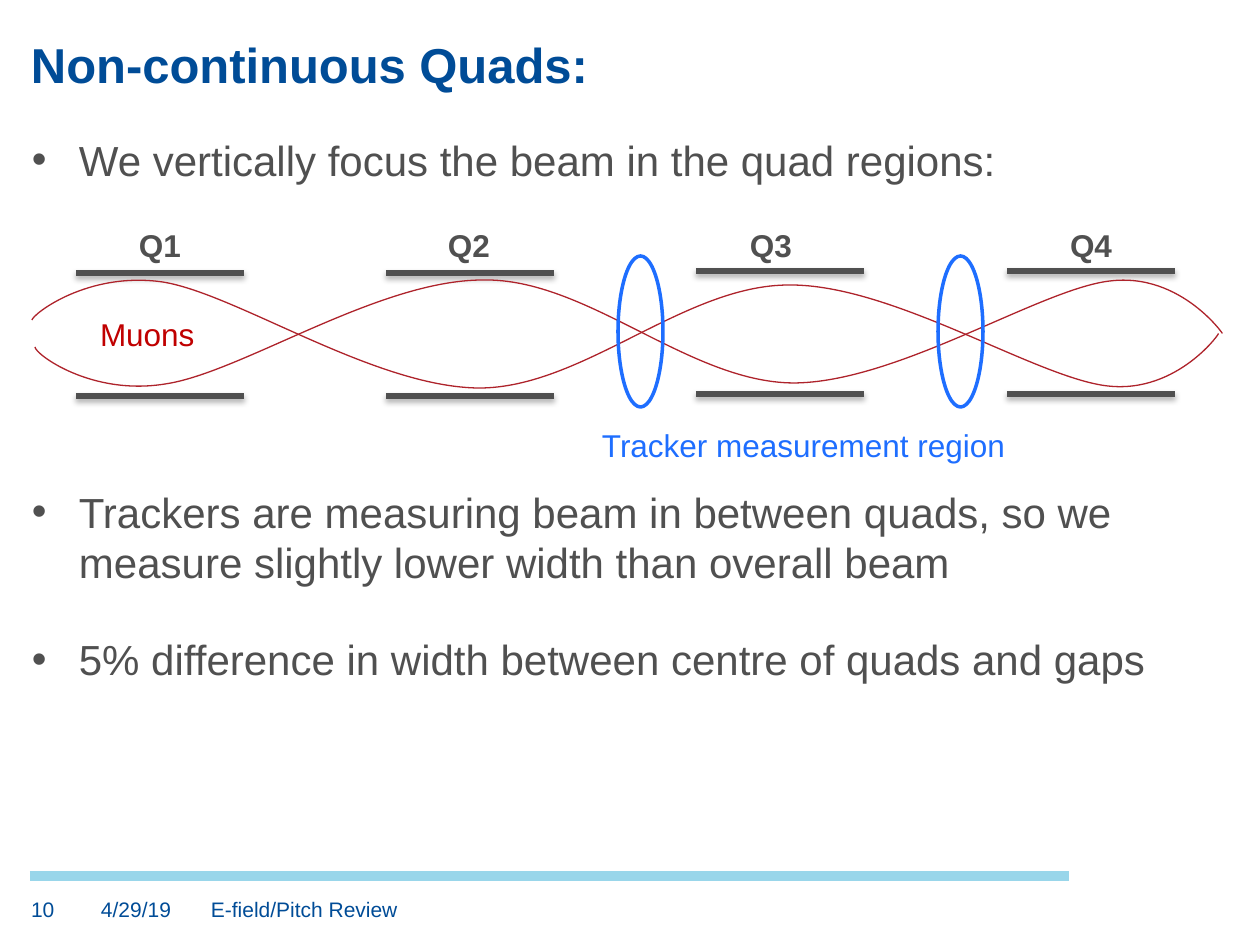
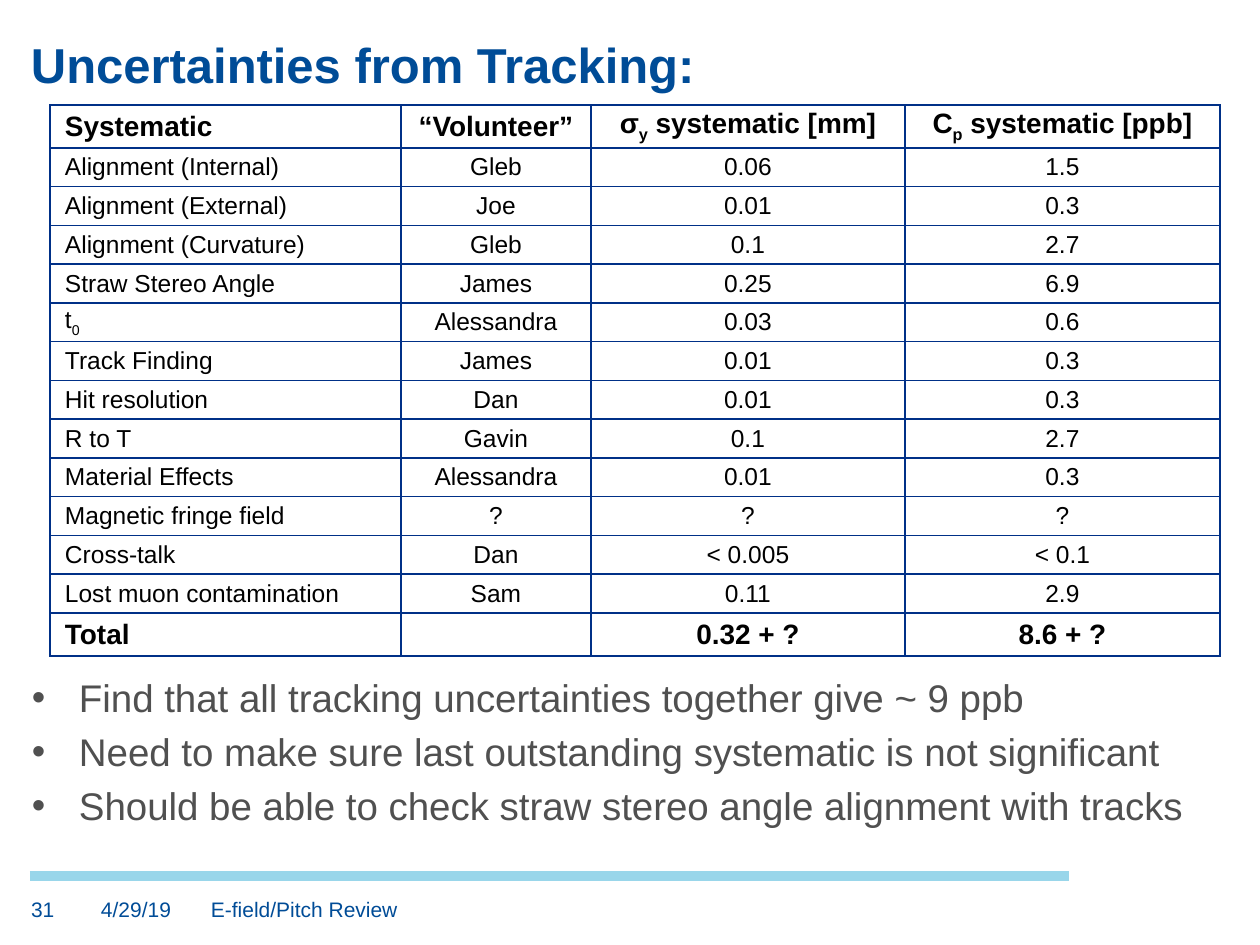
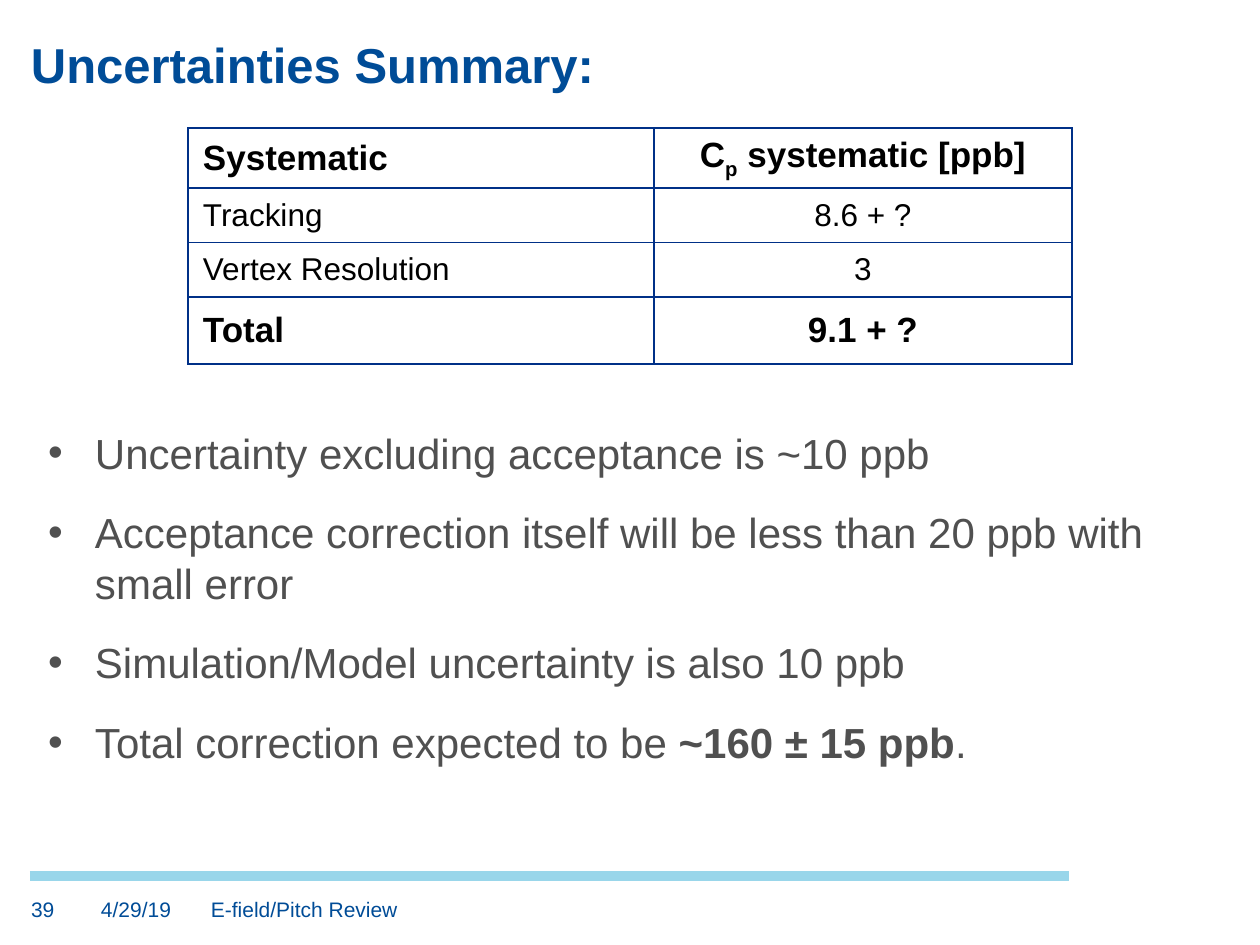
from lxml.etree import SubElement as Sub
from pptx import Presentation
from pptx.dml.color import RGBColor as RGB
from pptx.enum.shapes import MSO_CONNECTOR as LINK, MSO_SHAPE as SHAPE
from pptx.enum.text import MSO_ANCHOR as ANCHOR, PP_ALIGN as ALIGN
from pptx.oxml.ns import qn
from pptx.util import Pt

SCALE = 914400 / 126
FONT = "Arial"
HUES = {
    "title": "004C97",
    "band": "99D6EA",
    "text": "505050",
    "muon": "AE232B",
    "label": "C00000",
    "track": "1E6EFF",
    "grid": "003087",
    "cell": "000000",
    "shade": "000000",
}

WAVES = [
    [(32, 320), (33, 314), (88, 271), (163, 282), (237, 294), (374, 387),
     (479, 388), (583, 388), (684, 285), (789, 285), (893, 284), (1036, 378),
     (1108, 386), (1179, 394), (1223, 329), (1218, 334)],
    [(35, 347), (35, 354), (91, 396), (165, 384), (241, 373), (378, 280),
     (483, 280), (587, 278), (688, 382), (793, 383), (897, 383), (1040, 289),
     (1110, 281), (1182, 272), (1226, 338), (1222, 333)],
]

TRACKING = [
    ("Systematic", "“Volunteer”", "σ|y| systematic [mm]", "C|p| systematic [ppb]"),
    ("Alignment (Internal)", "Gleb", "0.06", "1.5"),
    ("Alignment (External)", "Joe", "0.01", "0.3"),
    ("Alignment (Curvature)", "Gleb", "0.1", "2.7"),
    ("Straw Stereo Angle", "James", "0.25", "6.9"),
    ("t|0", "Alessandra", "0.03", "0.6"),
    ("Track Finding", "James", "0.01", "0.3"),
    ("Hit resolution", "Dan", "0.01", "0.3"),
    ("R to T", "Gavin", "0.1", "2.7"),
    ("Material Effects", "Alessandra", "0.01", "0.3"),
    ("Magnetic fringe field", "?", "?", "?"),
    ("Cross-talk", "Dan", "< 0.005", "< 0.1"),
    ("Lost muon contamination", "Sam", "0.11", "2.9"),
    ("Total", "", "0.32 + ?", "8.6 + ?"),
]

SUMMARY = [
    ("Systematic", "C|p| systematic [ppb]"),
    ("Tracking", "8.6 + ?"),
    ("Vertex Resolution", "3"),
    ("Total", "9.1 + ?"),
]


def px(size):
    return round(size * SCALE)


def hue(name):
    return RGB.from_string(HUES[name])


def bold(run):
    run.font.bold = True


def lower(run):
    run.font._element.set("baseline", "-25000")


def write(para, words, size, tint, strong=False, accent=bold):
    head, *rest = words.split("|")
    para.text = head
    for part in rest:
        para.add_run().text = part
    for i, run in enumerate(para.runs):
        font = run.font
        font.name, font.size, font.bold = FONT, Pt(size), strong
        font.color.rgb = hue(tint)
        if i % 2:
            accent(run)


def frame(slide, spot, pad=(0, 0), wrap=True):
    box = slide.shapes.add_textbox(*map(px, spot)).text_frame
    box.margin_left = box.margin_right = px(pad[0])
    box.margin_top = box.margin_bottom = px(pad[1])
    box.word_wrap = wrap
    return box


def label(slide, spot, words, tint, strong=False):
    box = frame(slide, spot, (13, 6), False)
    write(box.paragraphs[0], words, 18, tint, strong)


def rule(slide, left, top, width, tint, weight, shade=False):
    line = slide.shapes.add_connector(
        LINK.STRAIGHT, px(left), px(top), px(left + width), px(top))
    line.line.color.rgb = hue(tint)
    line.line.width = Pt(weight)
    list_ = Sub(line._element.spPr, qn("a:effectLst"))
    if shade:
        cast = Sub(list_, qn("a:outerShdw"), blurRad="40000", dist="23000",
                   dir="5400000", rotWithShape="0")
        tone = Sub(cast, qn("a:srgbClr"), val=HUES["shade"])
        Sub(tone, qn("a:alpha"), val="35000")


def trim(shape, tint, weight):
    shape.shadow.inherit = False
    shape.fill.background()
    shape.line.color.rgb = hue(tint)
    shape.line.width = Pt(weight)


def ring(slide, left):
    trim(slide.shapes.add_shape(SHAPE.OVAL, *map(px, (left, 256, 45, 151))), "track", 2)


def wave(slide, knots):
    ends = [(px(x), px(y)) for x, y in knots[::3]]
    pen = slide.shapes.build_freeform(*ends[0])
    pen.add_line_segments(ends[1:], close=False)
    shape = pen.convert_to_shape()
    trace = next(shape._element.iter(qn("a:path")))
    for step in trace.findall(qn("a:lnTo")):
        trace.remove(step)
    for i in range(1, len(knots), 3):
        curve = Sub(trace, qn("a:cubicBezTo"))
        for x, y in knots[i:i + 3]:
            Sub(curve, qn("a:pt"), x=str(px(x) - shape.left), y=str(px(y) - shape.top))
    trim(shape, "muon", 0.75)


def points(slide, spot, size, items, gaps, after=0):
    box = frame(slide, spot)
    for i, words in enumerate(items):
        para = box.add_paragraph() if i else box.paragraphs[0]
        props = para._p.get_or_add_pPr()
        props.set("marL", str(px(47)))
        props.set("indent", str(px(-47)))
        Sub(props, qn("a:buFont"), typeface=FONT)
        Sub(props, qn("a:buChar"), char="•")
        para.space_after = Pt(after)
        if i:
            para.space_before = Pt(gaps[i - 1])
        write(para, words, size, "text")


def edge(cell):
    props = cell._tc.get_or_add_tcPr()
    for side in ("lnL", "lnR", "lnT", "lnB"):
        line = Sub(props, qn("a:" + side), w=str(Pt(1)))
        Sub(Sub(line, qn("a:solidFill")), qn("a:srgbClr"), val=HUES["grid"])
    cell.fill.background()


def grid(slide, left, top, rows, widths, heights, sizes):
    head, body, foot = heights
    last = len(rows) - 1
    table = slide.shapes.add_table(
        len(rows), len(widths), px(left), px(top), px(sum(widths)), px(sum(heights))).table
    table.first_row = table.horz_banding = False
    for col, width in zip(table.columns, widths):
        col.width = px(width)
    for r, row in enumerate(rows):
        ends = r in (0, last)
        table.rows[r].height = {0: px(head), last: px(foot)}.get(r, px(body) // (last - 1))
        for c, words in enumerate(row):
            cell = table.cell(r, c)
            cell.margin_left = px(2 if c else 15)
            cell.margin_right = cell.margin_top = cell.margin_bottom = px(2)
            cell.vertical_anchor = ANCHOR.MIDDLE
            edge(cell)
            para = cell.text_frame.paragraphs[0]
            para.alignment = ALIGN.CENTER if c else ALIGN.LEFT
            write(para, words, sizes[0] if ends else sizes[1], "cell", ends, lower)


def page(deck, title, number):
    slide = deck.slides.add_slide(deck.slide_layouts[6])
    rule(slide, 30, 876, 1039, "band", 6)
    box = frame(slide, (31, 35, 1197, 58))
    box.vertical_anchor = ANCHOR.BOTTOM
    write(box.paragraphs[0], title, 28, "title", True)
    for left, width, words in ((31, 57, number), (101, 93, "4/29/19"),
                               (211, 863, "E-field/Pitch Review")):
        write(frame(slide, (left, 897, width, 33)).paragraphs[0], words, 12, "title")
    return slide


def quads(deck):
    slide = page(deck, "Non-continuous Quads:", "10")
    for i, left in enumerate((126, 435, 737, 1057)):
        drop = 2 if i < 2 else 0
        for top in (271, 394):
            rule(slide, 76 + 931 * i // 3, top + drop, 168, "text", 3, True)
        label(slide, (left, 220, 68, 50), f"Q{i + 1}", "text", True)
    for knots in WAVES:
        wave(slide, knots)
    points(slide, (32, 134, 1194, 697), 24, [
        "We vertically focus the beam in the quad regions:",
        "Trackers are measuring beam in between quads, so we measure slightly lower width than overall beam",
        "5% difference in width between centre of quads and gaps",
    ], (172.5, 26.5))
    for left in (618, 938):
        ring(slide, left)
    label(slide, (87, 309, 121, 50), "Muons", "label")
    label(slide, (589, 420, 432, 50), "Tracker measurement region", "track")


def tracking(deck):
    slide = page(deck, "Uncertainties from Tracking:", "31")
    points(slide, (32, 674, 1194, 97), 22, [
        "Find that all tracking uncertainties together give ~ 9 ppb",
        "Need to make sure last outstanding systematic is not significant",
        "Should be able to check straw stereo angle alignment with tracks",
    ], (4.4, 4.4))
    grid(slide, 50, 105, TRACKING, (351, 190, 314, 315), (43, 465, 43), (16, 14))


def summary(deck):
    slide = page(deck, "Uncertainties Summary:", "39")
    points(slide, (48, 427, 1140, 386), 24, [
        "Uncertainty excluding acceptance is ~10 ppb",
        "Acceptance correction itself will be less than 20 ppb with small error",
        "Simulation/Model uncertainty is also 10 ppb",
        "Total correction expected to be |~160 ± 15 ppb|.",
    ], (4.8, 4.8, 4.8), 12)
    grid(slide, 188, 128, SUMMARY, (466, 418), (60, 109, 67), (20, 18))


def main():
    deck = Presentation()
    deck.slide_width, deck.slide_height = px(1260), px(945)
    quads(deck)
    tracking(deck)
    summary(deck)
    deck.save("out.pptx")


if __name__ == "__main__":
    main()
